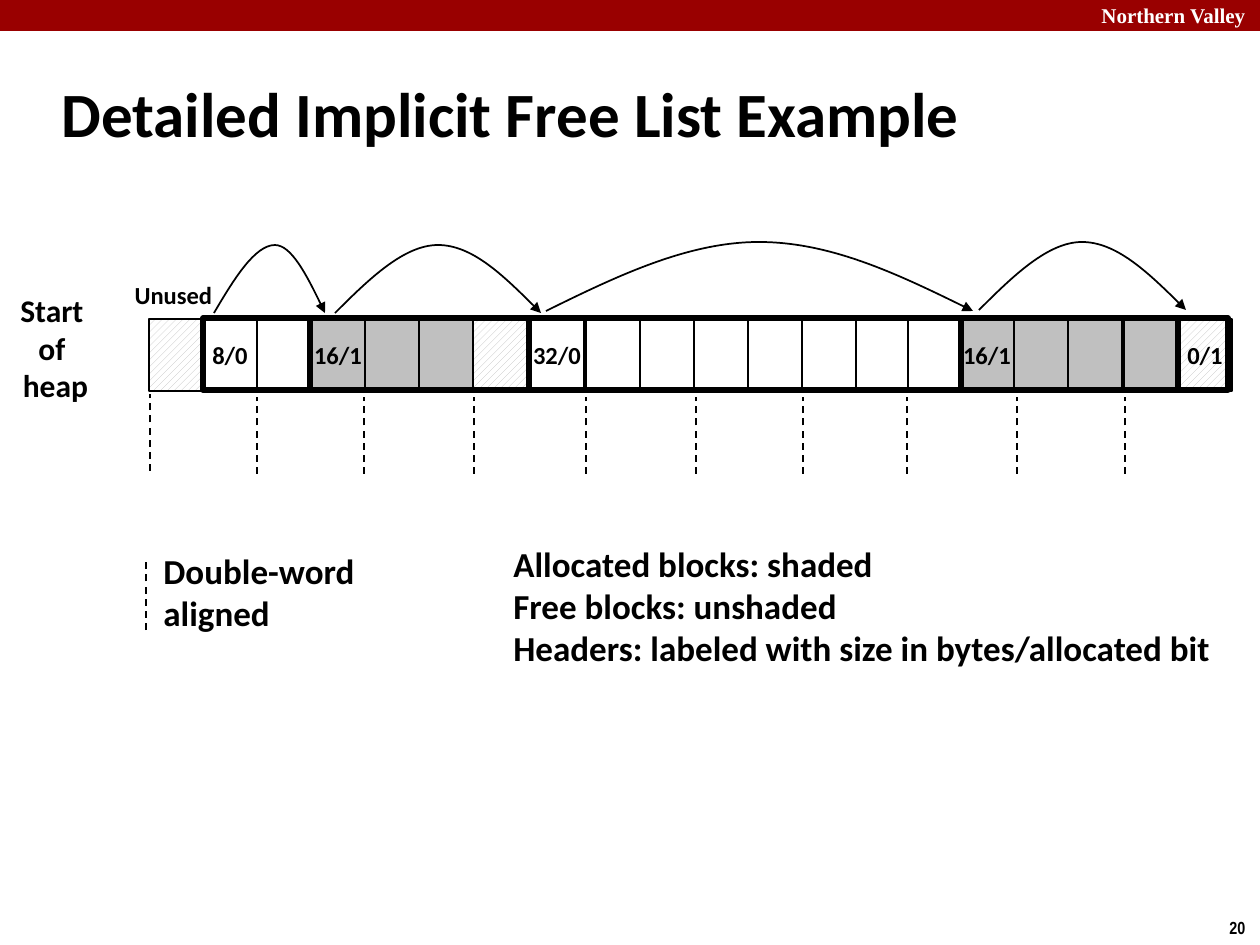
from lxml.etree import SubElement
from pptx import Presentation
from pptx.dml.color import RGBColor
from pptx.enum.dml import MSO_LINE, MSO_PATTERN
from pptx.enum.shapes import MSO_CONNECTOR, MSO_SHAPE
from pptx.enum.text import MSO_ANCHOR, MSO_AUTO_SIZE, PP_ALIGN
from pptx.oxml.ns import qn
from pptx.util import Inches, Pt

BLACK = RGBColor(0x00, 0x00, 0x00)
WHITE = RGBColor(0xFF, 0xFF, 0xFF)
GRAY = RGBColor(0xC0, 0xC0, 0xC0)
RED = RGBColor(0x99, 0x00, 0x00)

SCALE = Inches(1) / 126
CELL_WIDTH, CELL_TOP, CELL_HEIGHT = 54, 319, 72

CELL_RUNS = [
    (149, ["unused", "free", "free", "used", "used", "used", "unused"]),
    (530, ["free"]),
    (586, ["free"] * 6),
    (908, ["free"]),
    (960, ["used"] * 3),
    (1124, ["used", "unused"]),
]
HEADERS = {203: "8/0", 311: "16/1", 530: "32/0", 960: "16/1", 1178: "0/1"}
BLOCK_EDGES = [203, 310, 529, 961, 1178, 1228]
ARCS = [
    (214, 275, 325, 313, 245),
    (335, 438, 541, 313, 245),
    (546, 759, 973, 311, 242),
    (979, 1082, 1186, 310, 242),
]
ALIGNMENT_MARKS = [257, 364, 474, 586, 696, 803, 907, 1017, 1125]


def emu(*lengths):
    return [round(length * SCALE) for length in lengths]


class SlideBuilder:
    font = "Calibri"

    def __init__(self, presentation):
        self.slide = presentation.slides.add_slide(presentation.slide_layouts[5])

    def fill_text(self, frame, lines, size, color=BLACK, font=None,
                  align=PP_ALIGN.LEFT, anchor=MSO_ANCHOR.MIDDLE, wrap=False):
        frame.auto_size = MSO_AUTO_SIZE.NONE
        frame.word_wrap = wrap
        frame.vertical_anchor = anchor
        for index, line in enumerate(lines):
            paragraph = frame.add_paragraph() if index else frame.paragraphs[0]
            paragraph.alignment = align
            run = paragraph.add_run()
            run.text = line
            run.font.name = font or self.font
            run.font.size = Pt(size)
            run.font.bold = True
            run.font.color.rgb = color

    def title(self, box, text):
        shape = self.slide.shapes.title
        shape.left, shape.top, shape.width, shape.height = emu(*box)
        self.fill_text(shape.text_frame, [text], 36, wrap=True)

    def text(self, box, lines, size, **style):
        shape = self.slide.shapes.add_textbox(*emu(*box))
        self.fill_text(shape.text_frame, lines, size, **style)

    def outline(self, shape, width):
        shape.line.color.rgb = BLACK
        shape.line.width = Pt(width)

    def rectangle(self, box, fill=None, line_width=None):
        shape = self.slide.shapes.add_shape(MSO_SHAPE.RECTANGLE, *emu(*box))
        shape.shadow.inherit = False
        if fill is None:
            shape.fill.background()
        else:
            shape.fill.solid()
            shape.fill.fore_color.rgb = fill
        if line_width is None:
            shape.line.fill.background()
        else:
            self.outline(shape, line_width)
        return shape

    def cell(self, left, kind, header=None):
        box = (left, CELL_TOP, CELL_WIDTH, CELL_HEIGHT)
        shape = self.rectangle(box, GRAY if kind == "used" else WHITE, 1)
        if kind == "unused":
            shape.fill.patterned()
            shape.fill.pattern = MSO_PATTERN.WIDE_UPWARD_DIAGONAL
            shape.fill.fore_color.rgb = GRAY
            shape.fill.back_color.rgb = WHITE
        if header:
            self.fill_text(shape.text_frame, [header], 14, align=PP_ALIGN.CENTER)

    def dashed_line(self, x, bottom, top):
        connector = self.slide.shapes.add_connector(
            MSO_CONNECTOR.STRAIGHT, *emu(x, bottom, x, top))
        self.outline(connector, 1)
        connector.line.dash_style = MSO_LINE.DASH
        SubElement(connector.element.spPr, qn("a:effectLst"))

    def arc(self, start, peak, end, bottom, top):
        middle = (bottom + top) // 2
        rise, fall = (peak - start) // 3, (end - peak) // 3
        builder = self.slide.shapes.build_freeform(start, bottom, scale=SCALE)
        builder.add_line_segments([
            (start + rise, middle), (peak - rise, top), (peak, top),
            (peak + fall, top), (end - fall, middle), (end, bottom),
        ], close=False)
        shape = builder.convert_to_shape()
        shape.shadow.inherit = False
        shape.fill.background()
        self.outline(shape, 1)
        geometry = shape.element.xpath(".//a:path")[0]
        segments = geometry.findall(qn("a:lnTo"))
        for first in (0, 3):
            curve = SubElement(geometry, qn("a:cubicBezTo"))
            for segment in segments[first:first + 3]:
                curve.append(segment[0])
                geometry.remove(segment)
        line = shape.element.xpath(".//a:ln")[0]
        SubElement(line, qn("a:tailEnd"), type="triangle")


def main():
    presentation = Presentation()
    presentation.slide_width, presentation.slide_height = emu(1260, 945)
    builder = SlideBuilder(presentation)

    builder.rectangle((0, 0, 1260, 31), RED)
    builder.text((1089, -4, 180, 38), ["Northern Valley"], 12, color=WHITE,
                 font="Times New Roman", anchor=MSO_ANCHOR.TOP, wrap=True)
    builder.text((1217, 911, 43, 34), ["20"], 10, font="Arial Narrow",
                 anchor=MSO_ANCHOR.TOP)
    builder.title((49, 60, 1046, 105), "Detailed Implicit Free List Example")

    for start, kinds in CELL_RUNS:
        for index, kind in enumerate(kinds):
            left = start + index * CELL_WIDTH
            builder.cell(left, kind, HEADERS.get(left))
    for left, right in zip(BLOCK_EDGES, BLOCK_EDGES[1:]):
        builder.rectangle((left, 318, right - left, CELL_HEIGHT), line_width=3)
    for arc in ARCS:
        builder.arc(*arc)

    builder.dashed_line(150, 471, 394)
    for x in ALIGNMENT_MARKS:
        builder.dashed_line(x, 474, 397)
    builder.dashed_line(146, 630, 561)

    builder.text((10, 284, 91, 127), ["Start ", "of ", "heap"], 18,
                 align=PP_ALIGN.CENTER)
    builder.text((116, 271, 115, 47), ["Unused"], 14, align=PP_ALIGN.CENTER)
    builder.text((151, 543, 257, 97), ["Double-word", "aligned"], 20, wrap=True)
    builder.text((501, 536, 730, 140), [
        "Allocated blocks: shaded",
        "Free blocks: unshaded",
        "Headers: labeled with size in bytes/allocated bit",
    ], 20, anchor=MSO_ANCHOR.TOP)

    presentation.save("out.pptx")


if __name__ == "__main__":
    main()
